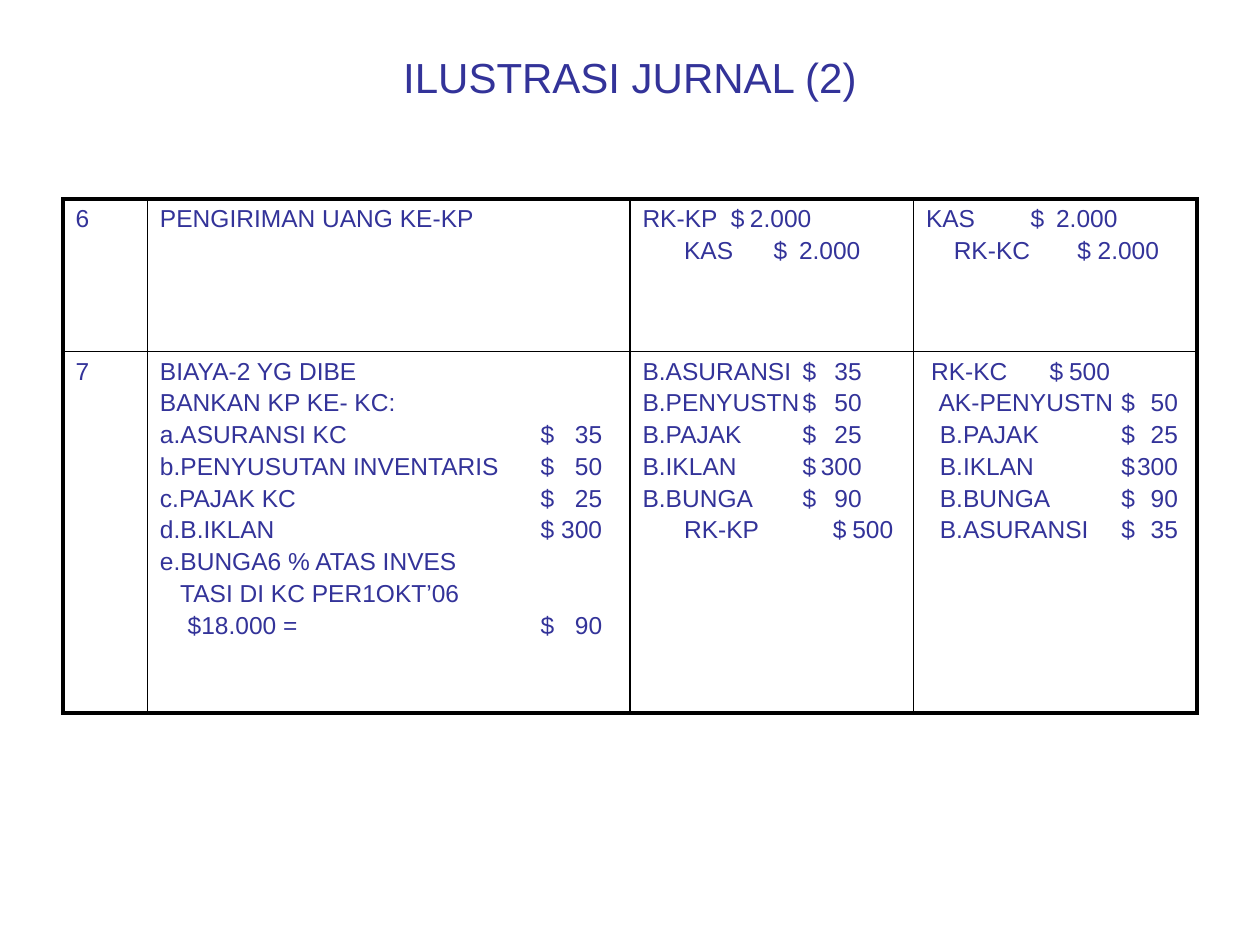
from dataclasses import dataclass

from lxml import etree
from pptx import Presentation
from pptx.dml import color
from pptx.enum import text
from pptx.oxml import ns
from pptx.util import Inches, Pt


@dataclass(frozen=True)
class Theme:
    """Colours, font and sizes of the slide."""
    ink: str = "333399"
    rule: str = "000000"
    font: str = "Arial"
    title: float = 24
    body: float = 14
    gap: float = 2.4
    outer: float = 2.25
    inner: float = 1


THEME = Theme()
COLUMNS = (0.67, 3.83, 2.25, 2.25)
ROWS = (1.21, 2.87)
COSTS = (3.02, 3.51)
DEBITS = (1.27, 1.74)
CREDITS = (1.55, 2)


def entry(label, amount=None, stops=(), indent=0):
    """Return a journal line as its text and its tab stops."""
    words, tabs = label, []
    if indent:
        words = "\t" + words
        tabs.append((indent, "l"))
    if amount:
        words += "\t$\t" + amount
        tabs += zip(stops, "lr")
    return words, tabs


JOURNAL = (
    (
        [entry("6")],
        [entry("PENGIRIMAN UANG KE-KP")],
        [entry("RK-KP", "2.000", (0.7, 1.34)),
         entry("KAS", "2.000", (1.04, 1.73), 0.33)],
        [entry("KAS", "2.000", (0.83, 1.52)),
         entry("RK-KC", "2.000", (1.2, 1.85), 0.22)],
    ),
    (
        [entry("7")],
        [entry("BIAYA-2 YG DIBE"),
         entry("BANKAN KP KE- KC:"),
         entry("a.ASURANSI KC", "35", COSTS),
         entry("b.PENYUSUTAN INVENTARIS", "50", COSTS),
         entry("c.PAJAK KC", "25", COSTS),
         entry("d.B.IKLAN", "300", COSTS),
         entry("e.BUNGA6 % ATAS INVES"),
         entry("TASI DI KC PER1OKT’06", indent=0.16),
         entry("$18.000 =", "90", COSTS, 0.22)],
        [entry("B.ASURANSI", "35", DEBITS),
         entry("B.PENYUSTN", "50", DEBITS),
         entry("B.PAJAK", "25", DEBITS),
         entry("B.IKLAN", "300", DEBITS),
         entry("B.BUNGA", "90", DEBITS),
         entry("RK-KP", "500", (1.51, 1.99), 0.33)],
        [entry("RK-KC", "500", (0.98, 1.46), 0.04),
         entry("AK-PENYUSTN", "50", CREDITS, 0.1),
         entry("B.PAJAK", "25", CREDITS, 0.11),
         entry("B.IKLAN", "300", CREDITS, 0.11),
         entry("B.BUNGA", "90", CREDITS, 0.11),
         entry("B.ASURANSI", "35", CREDITS, 0.11)],
    ),
)


def write(p, words, size):
    """Write one paragraph in the theme's font and ink."""
    r = p.add_run()
    r.text = words
    for font in (p.font, r.font):
        font.name = THEME.font
        font.size = Pt(size)
        font.color.rgb = color.RGBColor.from_string(THEME.ink)


def set_tabs(p, tabs):
    """Give a paragraph its tab stops."""
    stops = etree.Element(ns.qn("a:tabLst"))
    for pos, algn in tabs:
        etree.SubElement(stops, ns.qn("a:tab"), pos=str(Inches(pos)), algn=algn)
    p._p.get_or_add_pPr().append(stops)


def set_borders(cell, widths):
    """Draw the left, right, top and bottom borders of a cell."""
    tcPr = cell._tc.get_or_add_tcPr()
    for side, width in zip("LRTB", widths):
        ln = etree.SubElement(tcPr, ns.qn("a:ln" + side), w=str(Pt(width)))
        fill = etree.SubElement(ln, ns.qn("a:solidFill"))
        etree.SubElement(fill, ns.qn("a:srgbClr"), val=THEME.rule)


def fill_cell(cell, lines):
    """Write the journal lines of one cell."""
    tf = cell.text_frame
    for i, (words, tabs) in enumerate(lines):
        p = tf.add_paragraph() if i else tf.paragraphs[0]
        p.space_before = Pt(THEME.gap)
        if tabs:
            set_tabs(p, tabs)
        write(p, words, THEME.body)


def add_title(s, words, box):
    """Place the slide title in its box."""
    sp = s.shapes.title
    sp.left, sp.top, sp.width, sp.height = map(Inches, box)
    tf = sp.text_frame
    tf.vertical_anchor = text.MSO_ANCHOR.MIDDLE
    p = tf.paragraphs[0]
    p.alignment = text.PP_ALIGN.CENTER
    write(p, words, THEME.title)


def add_journal(s, box):
    """Place the journal table in its box."""
    table = s.shapes.add_table(len(ROWS), len(COLUMNS), *map(Inches, box)).table
    table.first_row = table.horz_banding = False
    for column, width in zip(table.columns, COLUMNS):
        column.width = Inches(width)
    last_row, last_col = len(ROWS) - 1, len(COLUMNS) - 1
    for i, cells in enumerate(JOURNAL):
        table.rows[i].height = Inches(ROWS[i])
        for j, lines in enumerate(cells):
            cell = table.cell(i, j)
            edges = (j == 0, j == last_col, i == 0, i == last_row)
            set_borders(cell, [THEME.outer if e else THEME.inner for e in edges])
            cell.fill.background()
            fill_cell(cell, lines)


def main():
    """Build and save the slide."""
    prs = Presentation()
    prs.slide_width, prs.slide_height = Inches(10), Inches(7.5)
    s = prs.slides.add_slide(prs.slide_layouts[5])
    add_title(s, "ILUSTRASI JURNAL (2)", (0.5, 0.3, 9, 0.62))
    add_journal(s, (0.5, 1.58, sum(COLUMNS), sum(ROWS)))
    prs.save("out.pptx")


if __name__ == "__main__":
    main()
